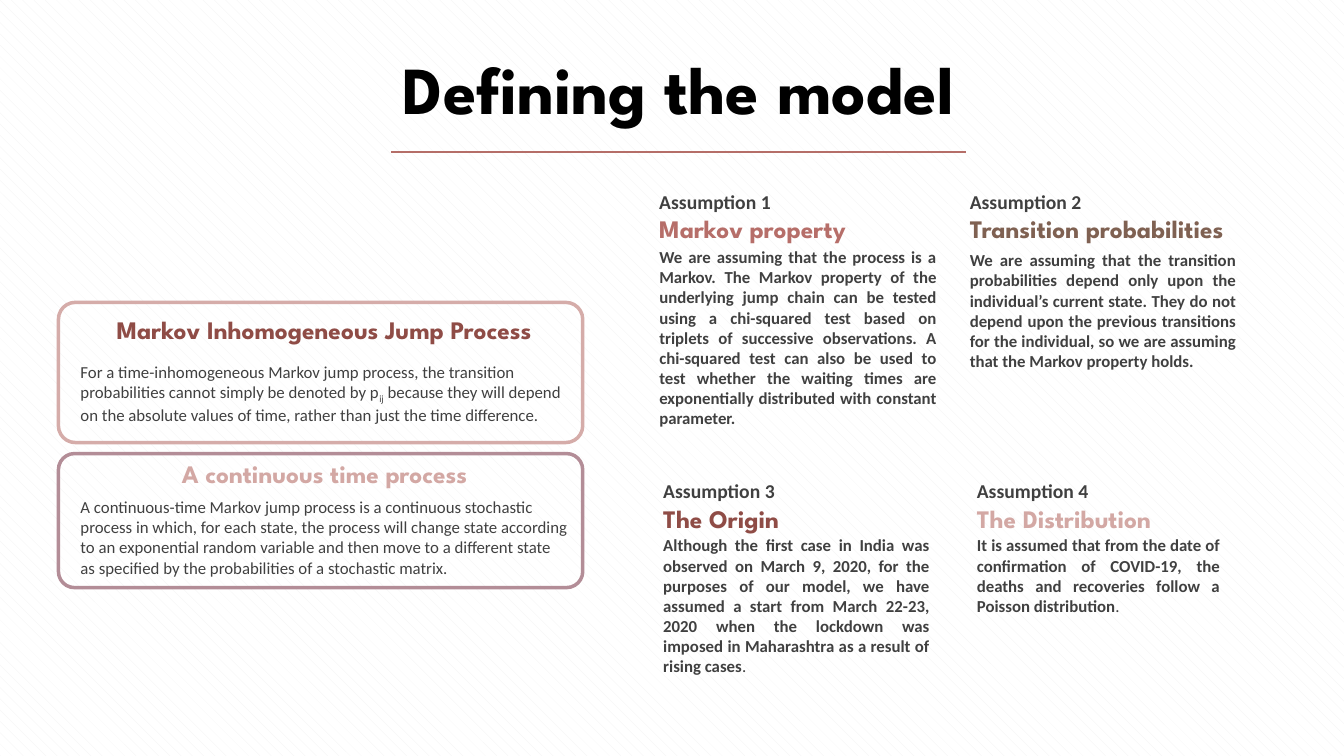
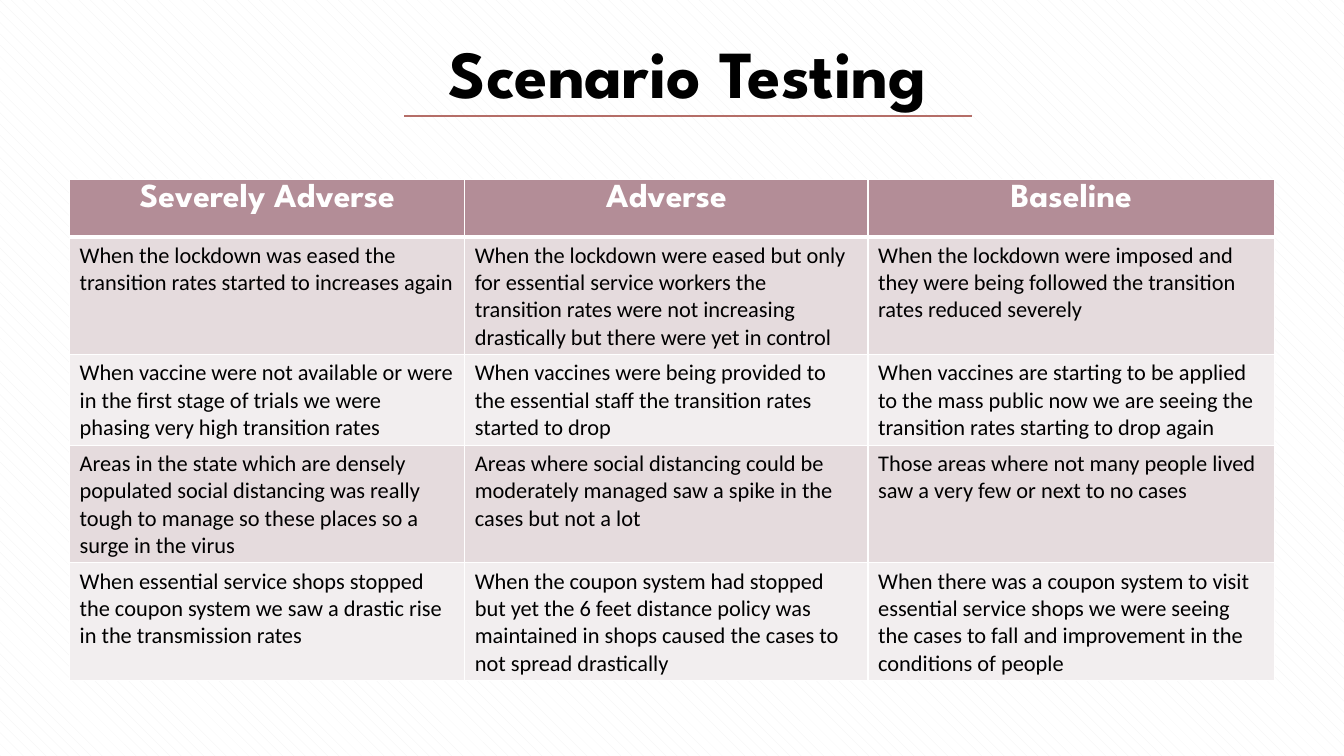
"""Build two slides on a Markov model: its assumptions and its scenarios."""
import dataclasses

import lxml.etree
import pptx
import pptx.dml.color
import pptx.enum.dml
import pptx.enum.shapes
import pptx.enum.text
import pptx.oxml.ns
import pptx.util

Inches = pptx.util.Inches
ALIGN = pptx.enum.text.PP_ALIGN
ANCHOR = pptx.enum.text.MSO_ANCHOR


@dataclasses.dataclass(frozen=True)
class Theme:
    """Hold the colours, fonts and type sizes of the presentation."""
    heading_font: str = "League Spartan"
    body_font: str = "Calibri"
    black: str = "000000"
    white: str = "FFFFFF"
    stripe: str = "F2F2F2"
    grey: str = "404040"
    rule: str = "B56E68"
    coral: str = "B66E69"
    brown: str = "7F6152"
    maroon: str = "8F4C46"
    pink: str = "D3A8A4"
    pink_line: str = "D5ACA9"
    mauve: str = "B38D97"
    bands: tuple = ("E5DBDD", "F2EEEF")
    title_size: int = 48
    table_heading_size: int = 24
    heading_size: int = 18
    table_size: int = 16
    label_size: int = 14
    body_size: int = 12


THEME = Theme()


@dataclasses.dataclass(frozen=True)
class Assumption:
    """Describe one numbered assumption and its place."""
    left: float
    top: float
    body_offset: float
    body_width: float
    body_height: float
    colour: str
    heading: str
    runs: list


ASSUMPTIONS = [
    Assumption(6.44, 1.83, 0.57, 2.95, 2.12, THEME.coral, "Markov property", [
        ("We are assuming that the process is a Markov. The Markov property of the underlying jump "
         "chain can be tested using a chi-squared test based on triplets of successive observations. "
         "A chi-squared test can also be used to test whether the waiting times are exponentially "
         "distributed with constant parameter.", {})]),
    Assumption(9.52, 1.83, 0.6, 2.84, 1.51, THEME.brown, "Transition probabilities", [
        ("We are assuming that the transition probabilities depend only upon the individual’s "
         "current state. They do not depend upon the previous transitions for the individual, so we "
         "are assuming that the Markov property holds.", {})]),
    Assumption(6.48, 4.7, 0.56, 2.84, 1.51, THEME.maroon, "The Origin", [
        ("Although the first case in India was observed on March 9, 2020, for the purposes of our "
         "model, we have assumed a start from March 22-23, 2020 when the lockdown was imposed in "
         "Maharashtra as a result of rising cases", {}), (".", {"bold": False})]),
    Assumption(9.59, 4.7, 0.56, 2.61, 0.91, THEME.pink, "The Distribution", [
        ("It is assumed that from the date of confirmation of COVID-19, the deaths and recoveries "
         "follow a Poisson distribution", {}), (".", {"bold": False})]),
]

INHOMOGENEOUS = [
    ("For a time-inhomogeneous Markov jump process, the transition probabilities cannot simply be "
     "denoted by p", {}),
    ("ij", {"baseline": -25}),
    (" because they will depend on the absolute values of time, rather than just the time "
     "difference.", {}),
]
CONTINUOUS = (
    "A continuous-time Markov jump process is a continuous stochastic process in which, for each "
    "state, the process will change state according to an exponential random variable and then move "
    "to a different state as specified by the probabilities of a stochastic matrix.")

SCENARIOS = [
    ["Severely Adverse", "Adverse", "Baseline"],
    ["When the lockdown was eased the transition rates started to increases again",
     "When the lockdown were eased but only for essential service workers the transition rates were "
     "not increasing drastically but there were yet in control",
     "When the lockdown were imposed and they were being followed the transition rates reduced "
     "severely"],
    ["When vaccine were not available or were in the first stage of trials we were phasing very high "
     "transition rates",
     "When vaccines were being provided to the essential staff the transition rates started to drop",
     "When vaccines are starting to be applied to the mass public now we are seeing the transition "
     "rates starting to drop again"],
    ["Areas in the state which are densely populated social distancing was really tough to manage so "
     "these places so a surge in the virus",
     "Areas where social distancing could be moderately managed saw a spike in the cases but not a "
     "lot",
     "Those areas where not many people lived saw a very few or next to no cases"],
    ["When essential service shops stopped the coupon system we saw a drastic rise in the "
     "transmission rates",
     "When the coupon system had stopped but yet the 6 feet distance policy was maintained in shops "
     "caused the cases to not spread drastically",
     "When there was a coupon system to visit essential service shops we were seeing the cases to "
     "fall and improvement in the conditions of people"],
]
COLUMN_WIDTHS = [3.92, 4, 4.03]
ROW_HEIGHTS = [0.57, 1.05, 0.85, 1.02, 1.05]


def rgb(colour):
    """Return the colour object for a hexadecimal string."""
    return pptx.dml.color.RGBColor.from_string(colour)


def write_text(frame, text, *, size=THEME.body_size, font=THEME.body_font, colour=THEME.grey,
               bold=False, align=ALIGN.LEFT):
    """Write a string, or runs with overrides, as one formatted paragraph."""
    paragraph = frame.paragraphs[0]
    paragraph.alignment = align
    for words, override in [(text, {})] if isinstance(text, str) else text:
        run = paragraph.add_run()
        run.text = words
        run.font.name = font
        run.font.size = pptx.util.Pt(size)
        run.font.bold = override.get("bold", bold)
        run.font.color.rgb = rgb(colour)
        if "baseline" in override:
            run._r.get_or_add_rPr().set("baseline", str(override["baseline"] * 1000))


def add_text(slide, box, text, *, anchor=ANCHOR.TOP, wrap=True, **text_format):
    """Add a text box that fits its text."""
    frame = slide.shapes.add_textbox(*map(Inches, box)).text_frame
    frame.word_wrap = wrap
    frame.auto_size = pptx.enum.text.MSO_AUTO_SIZE.SHAPE_TO_FIT_TEXT
    frame.vertical_anchor = anchor
    write_text(frame, text, **text_format)


def add_heading(slide, box, text, colour, **text_format):
    """Add a bold heading in the heading font."""
    text_format = {"size": THEME.heading_size, **text_format}
    add_text(slide, box, text, font=THEME.heading_font, colour=colour, bold=True, **text_format)


def add_rule(slide, left, right, top):
    """Add the thin horizontal line below a title."""
    line = slide.shapes.add_connector(pptx.enum.shapes.MSO_CONNECTOR.STRAIGHT,
                                      Inches(left), Inches(top), Inches(right), Inches(top))
    line.line.color.rgb = rgb(THEME.rule)
    line.line.width = pptx.util.Pt(1.5)
    lxml.etree.SubElement(line._element.spPr, pptx.oxml.ns.qn("a:effectLst"))


def add_titled_slide(presentation, title, title_box, rule):
    """Add a slide with the striped background, a title and its rule."""
    slide = presentation.slides.add_slide(presentation.slide_layouts[6])
    fill = slide.background.fill
    fill.patterned()
    fill.pattern = pptx.enum.dml.MSO_PATTERN.SHINGLE
    fill.fore_color.rgb = rgb(THEME.stripe)
    fill.back_color.rgb = rgb(THEME.white)
    add_heading(slide, title_box, title, THEME.black, size=THEME.title_size, align=ALIGN.CENTER)
    add_rule(slide, *rule)
    return slide


def add_card(slide, top, height, line_colour):
    """Add an unfilled rounded frame."""
    card = slide.shapes.add_shape(pptx.enum.shapes.MSO_SHAPE.ROUNDED_RECTANGLE,
                                  *map(Inches, (0.58, top, 5.2, height)))
    card.adjustments[0] = 0.12
    card.shadow.inherit = False
    card.fill.background()
    card.line.color.rgb = rgb(line_colour)
    card.line.width = pptx.util.Pt(2.5)


def add_assumption(slide, number, assumption):
    """Add the label, heading and body of one assumption."""
    left, top = assumption.left, assumption.top
    add_text(slide, (left, top, 2.7, 0.34), f"Assumption {number}", anchor=ANCHOR.MIDDLE,
             size=THEME.label_size, bold=True)
    add_heading(slide, (left, top + 0.24, 3.06, 0.4), assumption.heading, assumption.colour,
                anchor=ANCHOR.MIDDLE)
    body_box = (left, top + assumption.body_offset, assumption.body_width, assumption.body_height)
    add_text(slide, body_box, assumption.runs, bold=True, align=ALIGN.JUSTIFY)


def set_borders(cell, bottom_width):
    """Give a cell white borders, one point wide except at the bottom."""
    properties = cell._tc.get_or_add_tcPr()
    qn = pptx.oxml.ns.qn
    for side, width in (("L", 1), ("R", 1), ("T", 1), ("B", bottom_width)):
        line = lxml.etree.SubElement(properties, qn(f"a:ln{side}"), w=str(pptx.util.Pt(width)))
        fill = lxml.etree.SubElement(line, qn("a:solidFill"))
        lxml.etree.SubElement(fill, qn("a:srgbClr"), val=THEME.white)


def add_scenario_table(slide):
    """Add the table that compares the scenarios."""
    box = (0.69, 1.78, sum(COLUMN_WIDTHS), sum(ROW_HEIGHTS))
    table = slide.shapes.add_table(len(SCENARIOS), len(COLUMN_WIDTHS), *map(Inches, box)).table
    for column, width in zip(table.columns, COLUMN_WIDTHS):
        column.width = Inches(width)
    heading_format = {"size": THEME.table_heading_size, "font": THEME.heading_font,
                      "colour": THEME.white, "bold": True, "align": ALIGN.CENTER}
    body_format = {"size": THEME.table_size, "colour": THEME.black}
    for row_index, texts in enumerate(SCENARIOS):
        table.rows[row_index].height = Inches(ROW_HEIGHTS[row_index])
        is_heading = row_index == 0
        for column_index, text in enumerate(texts):
            cell = table.cell(row_index, column_index)
            set_borders(cell, 3 if is_heading else 1)
            cell.fill.solid()
            cell.fill.fore_color.rgb = rgb(
                THEME.mauve if is_heading else THEME.bands[(row_index - 1) % 2])
            write_text(cell.text_frame, text, **(heading_format if is_heading else body_format))


def build_model_slide(presentation):
    """Build the slide that defines the model."""
    slide = add_titled_slide(presentation, "Defining the model", (1.41, 0.42, 10.64, 0.91),
                             (3.88, 9.58, 1.51))
    for number, assumption in enumerate(ASSUMPTIONS, start=1):
        add_assumption(slide, number, assumption)
    add_card(slide, 3, 1.39, THEME.pink_line)
    add_card(slide, 4.5, 1.33, THEME.mauve)
    add_heading(slide, (0.75, 3.07, 4.93, 0.4), "Markov Inhomogeneous Jump Process", THEME.maroon,
                wrap=False, align=ALIGN.CENTER)
    add_heading(slide, (1.51, 4.5, 3.42, 0.4), "A continuous time process", THEME.pink,
                wrap=False, align=ALIGN.CENTER)
    add_text(slide, (0.7, 3.54, 5.04, 0.71), INHOMOGENEOUS)
    add_text(slide, (0.7, 4.88, 5.04, 0.91), CONTINUOUS)


def build_scenario_slide(presentation):
    """Build the slide that compares the scenarios."""
    slide = add_titled_slide(presentation, "Scenario Testing", (1.57, 0.26, 10.5, 0.91),
                             (4.01, 9.64, 1.15))
    add_scenario_table(slide)


def main():
    """Build and save the presentation."""
    presentation = pptx.Presentation()
    presentation.slide_width = Inches(13.33)
    presentation.slide_height = Inches(7.5)
    build_model_slide(presentation)
    build_scenario_slide(presentation)
    presentation.save("out.pptx")


if __name__ == "__main__":
    main()
